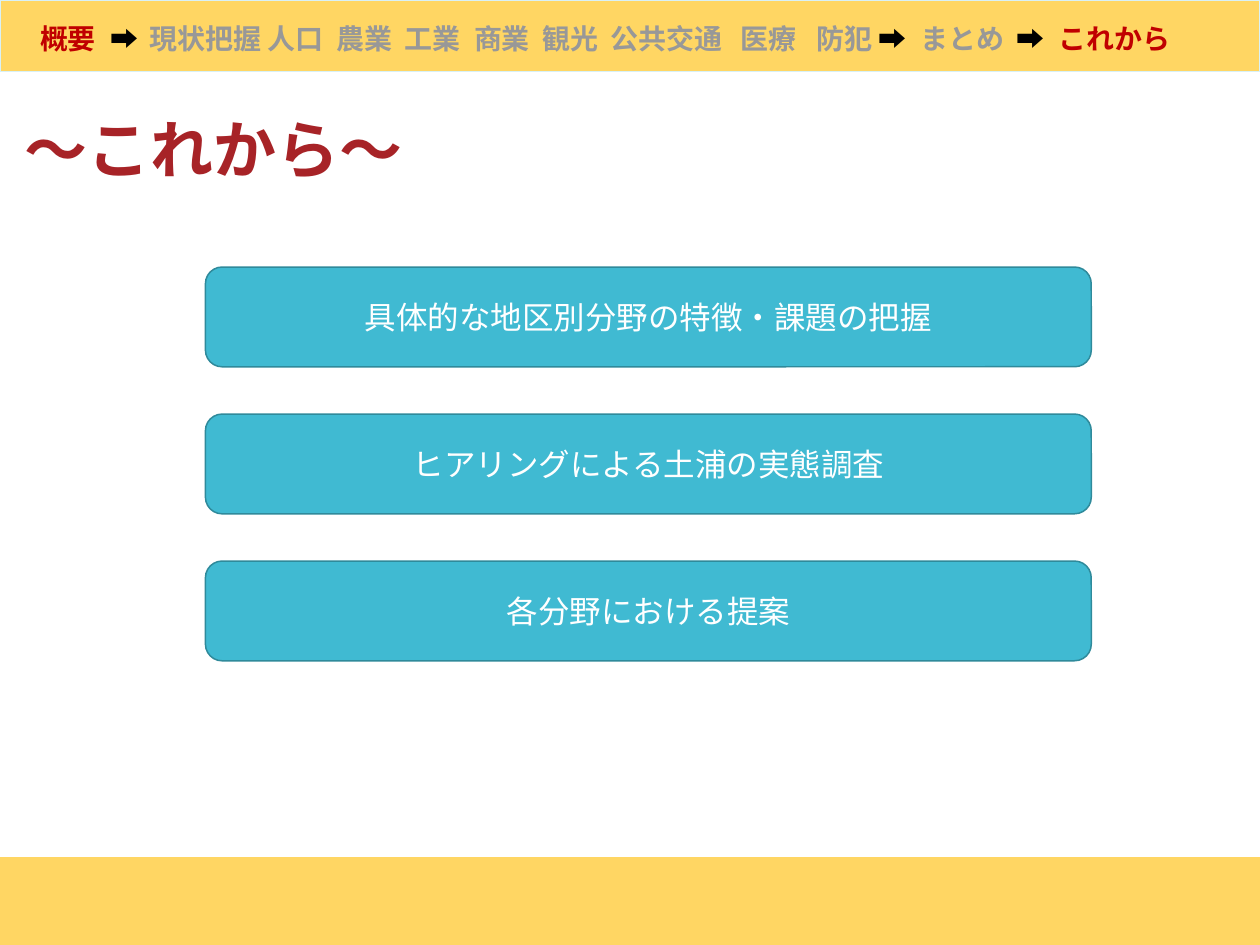
from pptx import Presentation
from pptx.dml.color import RGBColor
from pptx.enum.shapes import MSO_SHAPE
from pptx.enum.text import MSO_ANCHOR, MSO_AUTO_SIZE, PP_ALIGN
from pptx.oxml.ns import qn
from pptx.util import Pt
from lxml.etree import SubElement

FONT = "Calibri"
SLIDE_W, SLIDE_H = 720, 540
YELLOW, RED, GREY, BLACK = "FFD663", "C00000", "989898", "000000"

# Text, colour; each tab moves on to the next stop
AGENDA = [
    ("概要\t", RED),
    ("➡\t", BLACK),
    ("現状把握 人口\t農業\t工業\t商業\t観光\t公共交通\t医療\t防犯 ", GREY),
    ("➡\t", BLACK),
    ("まとめ\t", GREY),
    ("➡\t", BLACK),
    ("これから", RED),
]
AGENDA_STOPS = [40, 62.5, 169.5, 208.5, 248, 287, 326, 400.5, 443.5, 503, 558, 582]
TITLE = "～これから～"
STEPS = [
    "具体的な地区別分野の特徴・課題の把握",
    "ヒアリングによる土浦の実態調査",
    "各分野における提案",
]
STEP_LEFT, STEP_TOP, STEP_W, STEP_H, STEP_PITCH = 117.4, 152.6, 506.2, 57, 84


def rgb(value):
    return RGBColor.from_string(value)


def add_run(paragraph, text, size, color, bold=False):
    run = paragraph.add_run()
    run.text = text
    run.font.name = FONT
    run.font.size = Pt(size)
    run.font.bold = bold
    run.font.color.rgb = rgb(color)


def add_block(slide, preset, left, top, width, height, fill, line):
    block = slide.shapes.add_shape(preset, Pt(left), Pt(top), Pt(width), Pt(height))
    block.shadow.inherit = False
    block.fill.solid()
    block.fill.fore_color.rgb = rgb(fill)
    block.line.color.rgb = rgb(line)
    block.line.width = Pt(0.85)
    return block


def add_tab_stops(paragraph, stops):
    tab_list = SubElement(paragraph._p.get_or_add_pPr(), qn("a:tabLst"))
    for stop in stops:
        SubElement(tab_list, qn("a:tab"), pos=str(int(Pt(stop))), algn="l")


def add_agenda(slide):
    add_block(slide, MSO_SHAPE.RECTANGLE, 0, 0, SLIDE_W, 41, YELLOW, "D9F1F6")
    frame = slide.shapes.add_textbox(Pt(15.8), Pt(0.7), Pt(704.2), Pt(42.5)).text_frame
    frame.word_wrap = True
    frame.vertical_anchor = MSO_ANCHOR.MIDDLE
    agenda = frame.paragraphs[0]
    add_tab_stops(agenda, AGENDA_STOPS)
    for text, color in AGENDA:
        add_run(agenda, text, 16, color, bold=True)


def add_title(slide):
    frame = slide.shapes.add_textbox(Pt(7.2), Pt(59.8), Pt(233.3), Pt(51)).text_frame
    frame.word_wrap = False
    frame.auto_size = MSO_AUTO_SIZE.SHAPE_TO_FIT_TEXT
    add_run(frame.paragraphs[0], TITLE, 36, "A72327", bold=True)


def add_steps(slide):
    for index, text in enumerate(STEPS):
        step = add_block(slide, MSO_SHAPE.ROUNDED_RECTANGLE, STEP_LEFT,
                         STEP_TOP + index * STEP_PITCH, STEP_W, STEP_H,
                         "40BAD2", "2F8A9B")
        step.text_frame.word_wrap = True
        step.text_frame.vertical_anchor = MSO_ANCHOR.MIDDLE
        paragraph = step.text_frame.paragraphs[0]
        paragraph.alignment = PP_ALIGN.CENTER
        add_run(paragraph, text, 18, "FFFFFF")


def main():
    deck = Presentation()
    deck.slide_width, deck.slide_height = Pt(SLIDE_W), Pt(SLIDE_H)
    slide = deck.slides.add_slide(deck.slide_layouts[6])
    add_agenda(slide)
    add_block(slide, MSO_SHAPE.RECTANGLE, 0, 490, SLIDE_W, 50, YELLOW, YELLOW)
    add_title(slide)
    add_steps(slide)
    deck.save("out.pptx")


if __name__ == "__main__":
    main()
